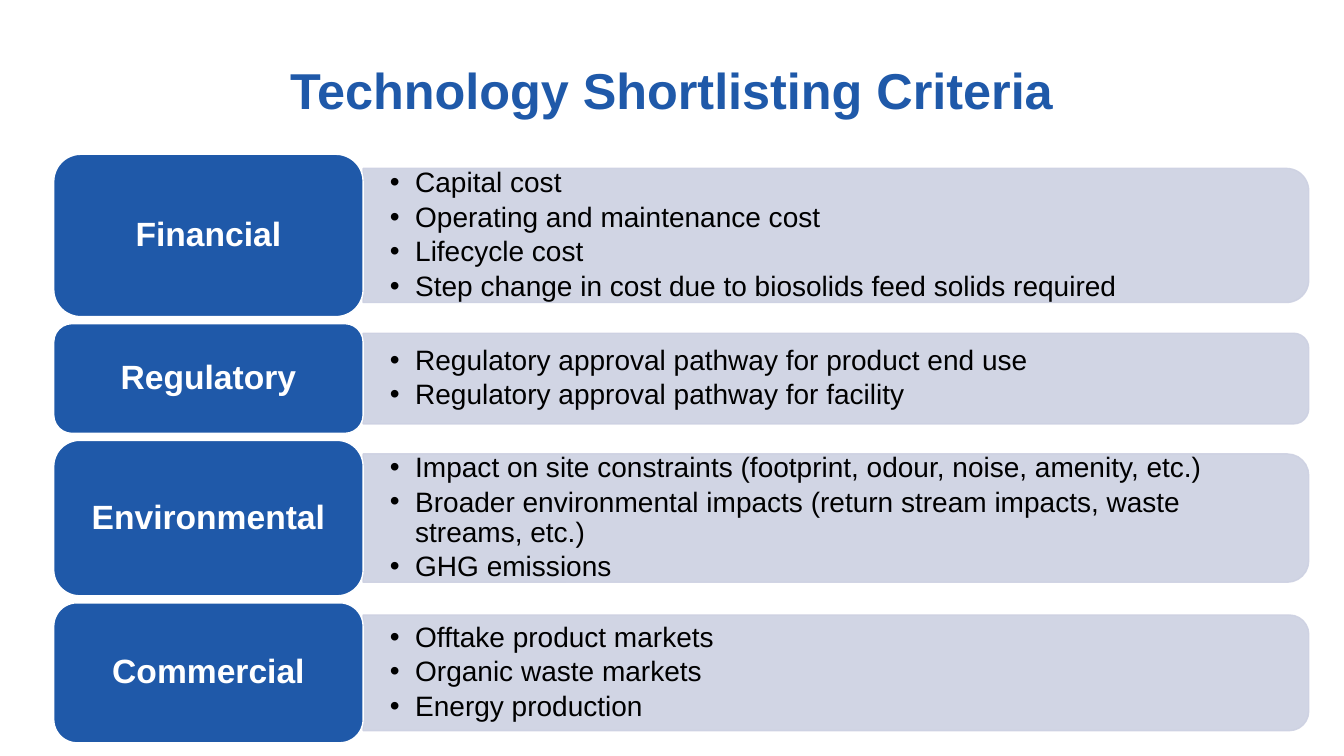
from lxml.etree import SubElement as Sub
from pptx import Presentation as Deck
from pptx.dml.color import RGBColor as Color
from pptx.enum.shapes import MSO_SHAPE as Form
from pptx.enum.text import MSO_ANCHOR as Anchor, PP_ALIGN as Align
from pptx.oxml.ns import qn
from pptx.util import Pt

BLUE, PALE, WHITE, BLACK = "1F59A9", "CDD1E2", "FFFFFF", "000000"

# Shared geometry, in points
LEFT, TOP, GAP = 38.4, 110.2, 5
LABEL_W, BAR_W = 221, 675.4
BAR_PART = 0.826  # bar height as a part of its label's height

FRAME = {"word_wrap": True, "vertical_anchor": Anchor.MIDDLE}
HEAD = {"name": "Arial", "size": Pt(36), "bold": True}
LABEL = {"name": "Arial", "size": Pt(24), "bold": True}
ITEM = {"name": "Arial", "size": Pt(20), "bold": False}
SIDES = ("margin_left", "margin_top", "margin_right", "margin_bottom")

# Label, label height, criteria
ROWS = [
    ("Financial", 116, [
        "Capital cost",
        "Operating and maintenance cost",
        "Lifecycle cost",
        "Step change in cost due to biosolids feed solids required"]),
    ("Regulatory", 78.4, [
        "Regulatory approval pathway for product end use",
        "Regulatory approval pathway for facility"]),
    ("Environmental", 111, [
        "Impact on site constraints (footprint, odour, noise, amenity, etc.)",
        "Broader environmental impacts (return stream impacts, "
        "waste streams, etc.)",
        "GHG emissions"]),
    ("Commercial", 100, [
        "Offtake product markets",
        "Organic waste markets",
        "Energy production"]),
]


def paint(target, code, alpha=None):
    """Give a fill or a font its colour, with optional opacity in percent."""
    if hasattr(target, "solid"):
        target.solid()
        target = target.fore_color
    else:
        target = target.color
    target.rgb = Color.from_string(code)
    return target


def style(obj, values):
    for key, value in values.items():
        setattr(obj, key, value)


def fade(shape, part):
    """Set the opacity of a shape's fill and line."""
    for tone in shape.element.spPr.iter(qn("a:srgbClr")):
        Sub(tone, qn("a:alpha")).set("val", str(part * 1000))


def block(slide, form, box, fill, edge):
    shape = slide.shapes.add_shape(form, *map(Pt, box))
    shape.shadow.inherit = False
    paint(shape.fill, fill)
    paint(shape.line.fill, edge)
    shape.line.width = Pt(1)
    return shape


def bullet(para):
    props = para._p.get_or_add_pPr()
    props.set("marL", str(Pt(18)))
    props.set("indent", str(-Pt(18)))
    Sub(props, qn("a:buFont")).set("typeface", "Arial")
    Sub(props, qn("a:buChar")).set("char", "•")


def write(shape, lines, look, code, pads, para_look, dots=False):
    frame = shape.text_frame
    style(frame, FRAME)
    style(frame, dict(zip(SIDES, map(Pt, pads))))
    for num, line in enumerate(lines):
        para = frame.add_paragraph() if num else frame.paragraphs[0]
        style(para, para_look)
        if dots:
            bullet(para)
        run = para.add_run()
        run.text = line
        style(run.font, look)
        paint(run.font, code)


def title(slide, text):
    box = slide.shapes.add_textbox(Pt(178.6), Pt(38.2), Pt(602.6), Pt(51))
    write(box, [text], HEAD, BLUE, (7.2, 3.6, 7.2, 3.6),
          {"alignment": Align.CENTER})


def bar(slide, mid, high, items):
    """Draw a bar rounded on its right side, with its list on top."""
    left = LEFT + LABEL_W
    side = left + (BAR_W - high) / 2
    shape = block(slide, Form.ROUND_2_SAME_RECTANGLE,
                  (side, mid - BAR_W / 2, high, BAR_W), PALE, PALE)
    shape.rotation = 90
    fade(shape, 90)
    box = slide.shapes.add_textbox(
        *map(Pt, (left, mid - high / 2, BAR_W - 5, high)))
    write(box, items, ITEM, BLACK, (19.2, 9.6, 19.2, 9.6),
          {"line_spacing": 0.9, "space_after": Pt(3)}, dots=True)


def label(slide, top, high, text):
    shape = block(slide, Form.ROUNDED_RECTANGLE,
                  (LEFT, top, LABEL_W, high), BLUE, WHITE)
    write(shape, [text], LABEL, WHITE, (7.2, 3.6, 7.2, 3.6),
          {"alignment": Align.CENTER, "line_spacing": 0.9})


def main():
    deck = Deck()
    style(deck, {"slide_width": Pt(960), "slide_height": Pt(540)})
    slide = deck.slides.add_slide(deck.slide_layouts[6])

    # Criteria rows, stacked with equal gaps
    top = TOP
    for name, high, items in ROWS:
        bar(slide, top + high / 2, high * BAR_PART, items)
        label(slide, top, high, name)
        top += high + GAP

    title(slide, "Technology Shortlisting Criteria")
    deck.save("out.pptx")


if __name__ == "__main__":
    main()
